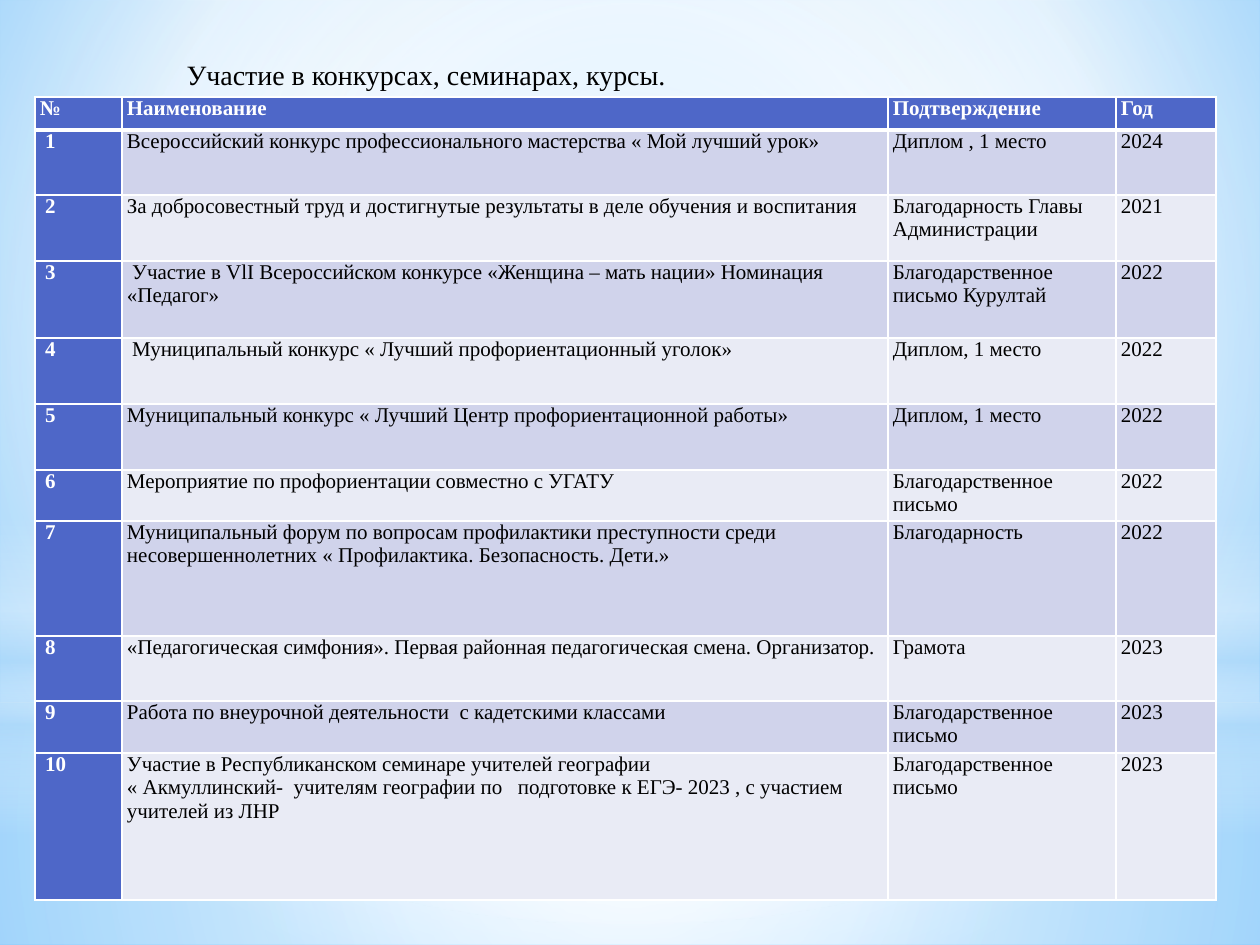
from lxml import etree
from pptx import Presentation
from pptx.dml.color import RGBColor
from pptx.enum.shapes import MSO_SHAPE
from pptx.enum.text import MSO_ANCHOR, MSO_AUTO_SIZE, PP_ALIGN
from pptx.oxml.ns import qn
from pptx.util import Emu, Pt

RECT, OVAL = MSO_SHAPE.RECTANGLE, MSO_SHAPE.OVAL
BOTTOM, TOP = MSO_ANCHOR.BOTTOM, MSO_ANCHOR.TOP
NO_FIT = MSO_AUTO_SIZE.NONE
LEFT = PP_ALIGN.LEFT

WHITE = RGBColor(0xFF, 0xFF, 0xFF)
BLACK = RGBColor(0x00, 0x00, 0x00)
BLUE = RGBColor(0x4E, 0x67, 0xC8)
BAND_DARK = RGBColor(0xD0, 0xD3, 0xEB)
BAND_LIGHT = RGBColor(0xE9, 0xEB, 0xF5)
SKY = RGBColor(0x9E, 0xD5, 0xFF)
DEEP_SKY = RGBColor(0x5B, 0xB9, 0xFF)
MIST = RGBColor(0xB4, 0xDC, 0xFA)

FONT = "Times New Roman"
PX_PER_INCH = 126
CENTER = (50, 50, 50, 50)

GLOWS = [
    (RECT, (0, 703, 1260, 242),
     [(0, WHITE, 91), (37, WHITE, 76), (100, MIST, 79)], CENTER),
    (RECT, (0, 0, 1260, 703),
     [(0, WHITE, 89), (48, WHITE, 62), (100, MIST, 79)], CENTER),
    (RECT, (0, 519, 1260, 315),
     [(0, WHITE, 0), (29, WHITE, 30), (45, MIST, 40), (55, WHITE, 26),
      (65, MIST, 60), (100, WHITE, 0)], None),
    (OVAL, (0, 221, 1260, 703), [(0, WHITE, 100), (56, WHITE, 0)], CENTER),
]

COLUMNS = [87, 766, 228, 100]
ROW_HEIGHTS = [33, 65, 66, 77, 66, 66, 51, 115, 65, 52, 147]
HEADER = ["№", "Наименование", "Подтверждение", "Год"]
AWARDS = [
    ("Всероссийский конкурс профессионального мастерства « Мой лучший урок»",
     "Диплом , 1 место", "2024"),
    ("За добросовестный труд и достигнутые результаты в деле обучения и воспитания",
     "Благодарность Главы Администрации", "2021"),
    (" Участие в VlI Всероссийском конкурсе «Женщина – мать нации» Номинация «Педагог»",
     "Благодарственное письмо Курултай", "2022"),
    (" Муниципальный конкурс « Лучший профориентационный уголок»",
     "Диплом, 1 место", "2022"),
    ("Муниципальный конкурс « Лучший Центр профориентационной работы»",
     "Диплом, 1 место", "2022"),
    ("Мероприятие по профориентации совместно с УГАТУ",
     "Благодарственное письмо", "2022"),
    ("Муниципальный форум по вопросам профилактики преступности среди "
     "несовершеннолетних « Профилактика. Безопасность. Дети.»",
     "Благодарность", "2022"),
    ("«Педагогическая симфония». Первая районная педагогическая смена. Организатор.",
     "Грамота", "2023"),
    ("Работа по внеурочной деятельности  с кадетскими классами",
     "Благодарственное письмо", "2023"),
    ("Участие в Республиканском семинаре учителей географии\n"
     "« Акмуллинский-  учителям географии по   подготовке к ЕГЭ- 2023 , "
     "с участием учителей из ЛНР",
     "Благодарственное письмо", "2023"),
]


def px(n):
    return Emu(round(n * 914400 / PX_PER_INCH))


def add(parent, tag, **attrs):
    return etree.SubElement(parent, qn(tag), {k: str(v) for k, v in attrs.items()})


def set_gradient(fill, owner, stops, focus):
    fill.gradient()
    grad = owner.find(".//" + qn("a:gradFill"))
    for child in list(grad):
        grad.remove(child)
    stop_list = add(grad, "a:gsLst")
    for position, color, alpha in stops:
        stop = add(stop_list, "a:gs", pos=position * 1000)
        clr = add(stop, "a:srgbClr", val=color)
        if alpha < 100:
            add(clr, "a:alpha", val=alpha * 1000)
    if focus:
        circle = add(grad, "a:path", path="circle")
        add(circle, "a:fillToRect", **{k: v * 1000 for k, v in zip("ltrb", focus)})
    else:
        add(grad, "a:lin", ang=90 * 60000, scaled=0)


def format_text(tf, size, color, bold=False):
    for p in tf.paragraphs:
        p.alignment = LEFT
        for r in p.runs:
            r.font.name = FONT
            r.font.size = Pt(size)
            r.font.bold = bold
            r.font.color.rgb = color


def add_glow(s, kind, box, stops, focus):
    sp = s.shapes.add_shape(kind, *map(px, box))
    sp.shadow.inherit = False
    sp.line.fill.background()
    set_gradient(sp.fill, sp._element, stops, focus)


def format_title(s, text):
    title = s.shapes.title
    title.left, title.top, title.width, title.height = map(px, (174, 16, 1032, 81))
    tf = title.text_frame
    tf.text = text
    tf.word_wrap = True
    tf.auto_size = NO_FIT
    tf.vertical_anchor = BOTTOM
    format_text(tf, 16, BLACK)
    s.shapes._spTree.append(title._element)


def set_borders(cell, **widths):
    tc_pr = cell._tc.get_or_add_tcPr()
    for side in "LRTB":
        ln = add(tc_pr, "a:ln" + side, w=Pt(widths.get(side, 1)))
        add(add(ln, "a:solidFill"), "a:srgbClr", val=WHITE)


def format_cell(cell, text, row, col):
    cell.text = text
    cell.margin_left = cell.margin_right = px(5)
    cell.margin_top = cell.margin_bottom = 0
    cell.vertical_anchor = TOP
    set_borders(cell, **{0: {"B": 3}, 1: {"T": 3}}.get(row, {}))
    accent = row == 0 or col == 0
    cell.fill.solid()
    cell.fill.fore_color.rgb = BLUE if accent else (BAND_LIGHT, BAND_DARK)[row % 2]
    format_text(cell.text_frame, 12, WHITE if accent else BLACK, accent)


def add_awards_table(s):
    rows = [HEADER] + [(f" {n}", *award) for n, award in enumerate(AWARDS, 1)]
    box = (35, 97, sum(COLUMNS), sum(ROW_HEIGHTS))
    table = s.shapes.add_table(len(rows), len(COLUMNS), *map(px, box)).table
    for column, width in zip(table.columns, COLUMNS):
        column.width = px(width)
    for i, (texts, height) in enumerate(zip(rows, ROW_HEIGHTS)):
        table.rows[i].height = px(height)
        for j, text in enumerate(texts):
            format_cell(table.cell(i, j), text, i, j)


def main():
    prs = Presentation()
    prs.slide_width, prs.slide_height = px(1260), px(945)
    s = prs.slides.add_slide(prs.slide_layouts[5])
    set_gradient(s.background.fill, s._element,
                 [(0, SKY, 100), (60, WHITE, 100), (100, DEEP_SKY, 100)],
                 (20, 10, 20, 60))
    for glow in GLOWS:
        add_glow(s, *glow)
    format_title(s, "Участие в конкурсах, семинарах, курсы.")
    add_awards_table(s)
    prs.save("out.pptx")


if __name__ == "__main__":
    main()
